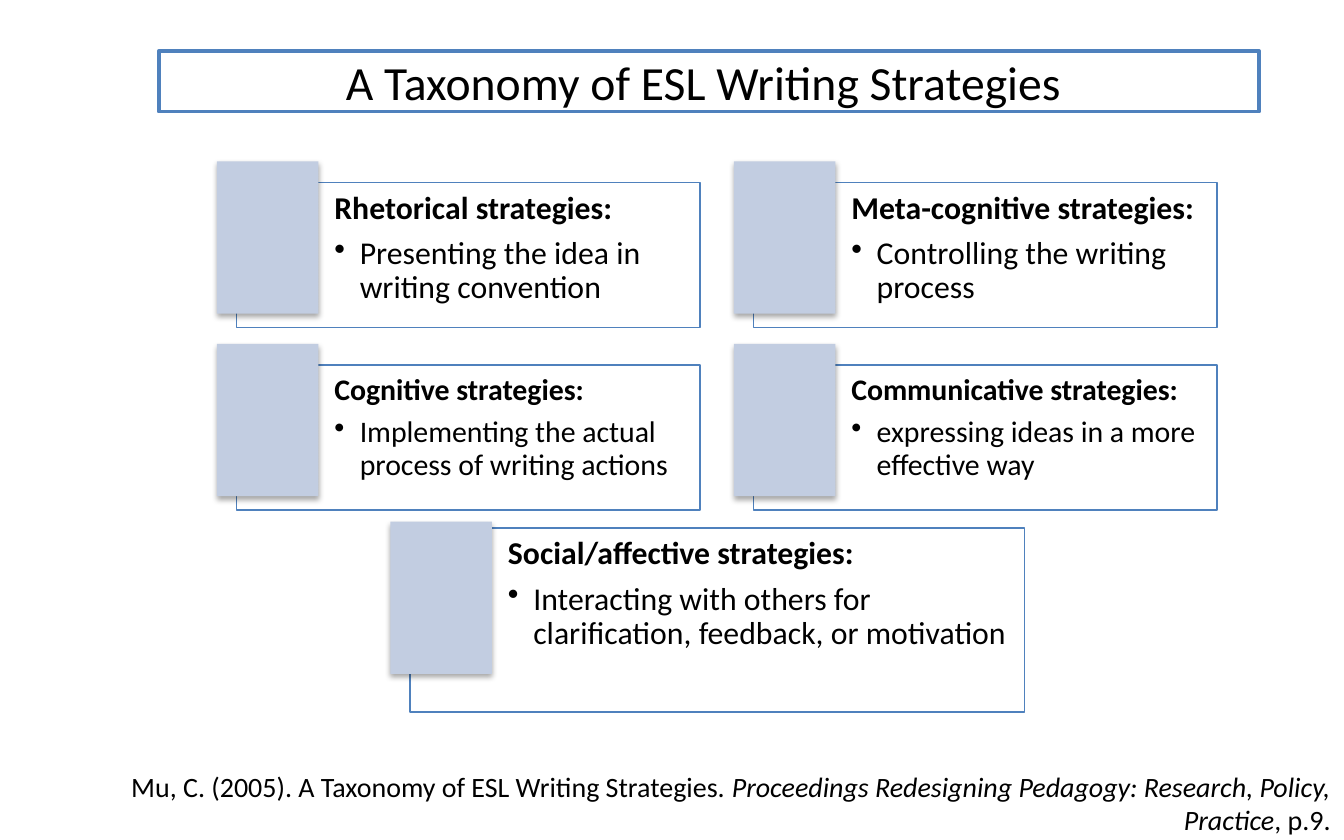
from lxml import etree
from pptx import Presentation
from pptx import util as u
from pptx.dml.color import RGBColor
from pptx.enum import shapes, text
from pptx.oxml import parse_xml
from pptx.oxml.ns import nsdecls, qn

COLORS = {"white": "FFFFFF", "outline": "4F81BD", "tile": "C2CDE1", "ink": "000000"}
FONT = "Calibri"

# Grid of the four equal cards, in cm
FIRST_LEFT, FIRST_TOP = 4.47, 3.45
COLUMN_STEP, ROW_STEP = 9.77, 3.45
CARD_SIZE = (8.76, 2.74)
TILE_SIZE = (1.92, 2.88)
TILE_SHIFT = 0.37

GRID_CARDS = [
    ("Rhetorical strategies:", "Presenting the idea in writing convention", 17),
    ("Meta-cognitive strategies:", "Controlling the writing process", 17),
    ("Cognitive strategies:", "Implementing the actual process of writing actions", 16),
    ("Communicative strategies:", "expressing ideas in a more effective way", 16),
]


def color(name):
    return RGBColor.from_string(COLORS[name])


def add_rect(slide, left, top, width, height, fill, line_width=None):
    rect = slide.shapes.add_shape(shapes.MSO_SHAPE.RECTANGLE,
                                  *map(u.Cm, (left, top, width, height)))
    rect.shadow.inherit = False
    rect.fill.solid()
    rect.fill.fore_color.rgb = color(fill)
    if line_width:
        rect.line.color.rgb = color("outline")
        rect.line.width = u.Pt(line_width)
    else:
        rect.line.fill.background()
    return rect


def add_run(paragraph, words, size, bold=False, italic=False):
    run = paragraph.add_run()
    run.text = words
    run.font.name = FONT
    run.font.size = u.Pt(size)
    run.font.bold = bold
    run.font.italic = italic
    run.font.color.rgb = color("ink")


def add_bullet(paragraph):
    props = paragraph._p.get_or_add_pPr()
    props.set("marL", str(u.Cm(0.48)))
    props.set("indent", str(-u.Cm(0.48)))
    etree.SubElement(props, qn("a:buChar"), char="•")


def soften_fill(rect, percent):
    fill_color = rect._element.spPr.find(qn("a:solidFill"))[0]
    etree.SubElement(fill_color, qn("a:alpha"), val=str(percent * 1000))


def add_shadow(rect):
    effects = rect._element.spPr.find(qn("a:effectLst"))
    effects.append(parse_xml(
        f'<a:outerShdw {nsdecls("a")} blurRad="{u.Pt(3.1)}" dist="{u.Pt(1.8)}" '
        f'dir="5400000" rotWithShape="0"><a:srgbClr val="{COLORS["ink"]}">'
        '<a:alpha val="35000"/></a:srgbClr></a:outerShdw>'))


def add_card(slide, left, top, size, heading, example, font_size, tile_rise=0.4):
    # Frame with heading and bullet
    frame = add_rect(slide, left, top, *size, "white", 0.75)
    soften_fill(frame, 40)
    body = frame.text_frame
    body.word_wrap = True
    body.vertical_anchor = text.MSO_ANCHOR.TOP
    body.margin_left = u.Cm(1.85)
    body.margin_top = body.margin_right = body.margin_bottom = u.Cm(0.18)

    heading_line, example_line = body.paragraphs[0], body.add_paragraph()
    add_bullet(example_line)
    for paragraph, share in ((heading_line, 0.35), (example_line, 0.15)):
        paragraph.alignment = text.PP_ALIGN.LEFT
        paragraph.line_spacing = 0.9
        paragraph.space_after = u.Pt(round(share * font_size, 1))
    add_run(heading_line, heading, font_size, bold=True)
    add_run(example_line, example, font_size)

    # Tile over the upper left corner
    add_shadow(add_rect(slide, left - TILE_SHIFT, top - tile_rise, *TILE_SIZE, "tile"))


def add_citation(slide):
    box = slide.shapes.add_textbox(*map(u.Cm, (1.9, 14.5, 23.5, 1.35)))
    box.text_frame.word_wrap = True
    box.text_frame.vertical_anchor = text.MSO_ANCHOR.MIDDLE
    citation = box.text_frame.paragraphs[0]
    citation.alignment = text.PP_ALIGN.RIGHT
    add_run(citation, "Mu, C. (2005). A Taxonomy of ESL Writing Strategies. ", 15)
    add_run(citation, "Proceedings Redesigning Pedagogy: Research, Policy, Practice",
            15, italic=True)
    add_run(citation, ", p.9.", 15)


def add_title(slide):
    banner = add_rect(slide, 3, 0.97, 20.8, 1.14, "white", 2)
    banner.text_frame.word_wrap = True
    banner.text_frame.vertical_anchor = text.MSO_ANCHOR.MIDDLE
    title = banner.text_frame.paragraphs[0]
    title.alignment = text.PP_ALIGN.CENTER
    add_run(title, "A Taxonomy of ESL Writing Strategies ", 25.5)


def main():
    deck = Presentation()
    deck.slide_width, deck.slide_height = u.Cm(25.4), u.Cm(15.88)
    slide = deck.slides.add_slide(deck.slide_layouts[6])

    # Four cards in two columns
    for index, card in enumerate(GRID_CARDS):
        row, column = divmod(index, 2)
        add_card(slide, FIRST_LEFT + column * COLUMN_STEP,
                 FIRST_TOP + row * ROW_STEP, CARD_SIZE, *card)

    # Wider card centred below
    add_card(slide, 7.75, 9.98, (11.61, 3.48), "Social/affective strategies:",
             "Interacting with others for clarification, feedback, or motivation",
             17, tile_rise=0.12)

    add_citation(slide)
    add_title(slide)
    deck.save("out.pptx")


if __name__ == "__main__":
    main()
